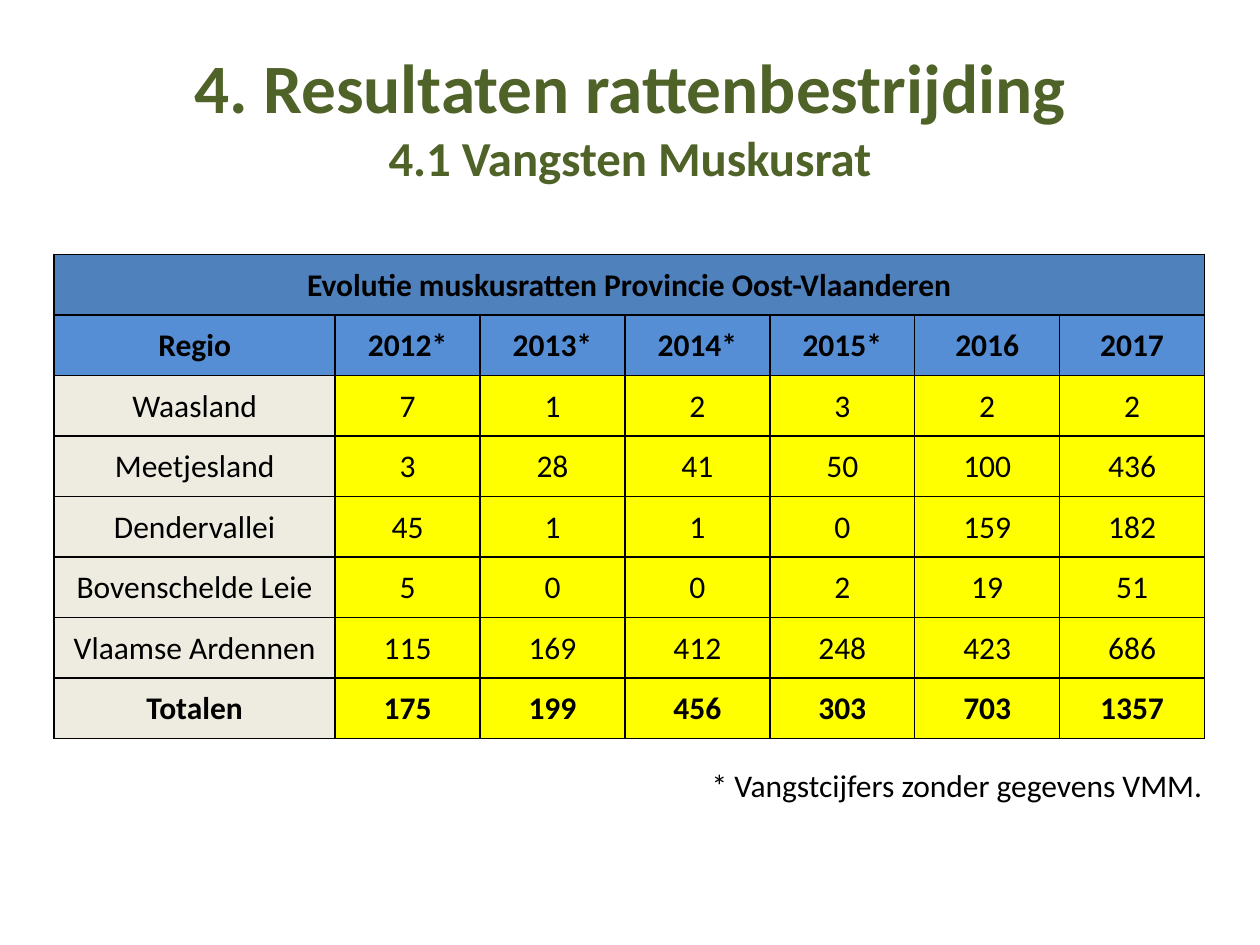
"""Build the slide with yearly muskrat catches per region of Oost-Vlaanderen."""
from lxml import etree
from pptx import Presentation, util as u
from pptx.dml.color import RGBColor
from pptx.enum import text
from pptx.oxml.ns import qn


def colour(target, value):
    target.solid()
    target.fore_color.rgb = RGBColor.from_string(value)


def add_run(paragraph, wording, size, ink, bold):
    run = paragraph.add_run()
    run.text = wording
    run.font.name = "Calibri"
    run.font.size = u.Pt(size)
    run.font.bold = bold
    colour(run.font.fill, ink)


deck = Presentation()
deck.slide_width, deck.slide_height = u.Inches(10), u.Inches(7.5)
slide = deck.slides.add_slide(deck.slide_layouts[5])

heading = slide.shapes.title
heading.left, heading.top = int(deck.slide_width * 0.05), u.Inches(0.29)
heading.width, heading.height = int(deck.slide_width * 0.9), u.Inches(1.25)
heading.text_frame.auto_size = text.MSO_AUTO_SIZE.NONE
heading.text_frame.vertical_anchor = text.MSO_ANCHOR.MIDDLE
heading_line = heading.text_frame.paragraphs[0]
heading_line.alignment = text.PP_ALIGN.CENTER
add_run(heading_line, "4. Resultaten rattenbestrijding", 39.6, "4F6228", True)
heading_line.add_line_break()
add_run(heading_line, "4.1 Vangsten Muskusrat", 27.9, "4F6228", True)

years = ["2012*", "2013*", "2014*", "2015*", "2016", "2017"]
catches = {
    "Waasland": [7, 1, 2, 3, 2, 2],
    "Meetjesland": [3, 28, 41, 50, 100, 436],
    "Dendervallei": [45, 1, 1, 0, 159, 182],
    "Bovenschelde Leie": [5, 0, 0, 2, 19, 51],
    "Vlaamse Ardennen": [115, 169, 412, 248, 423, 686],
}
totals = [sum(year) for year in zip(*catches.values())]
rows = [["Evolutie muskusratten Provincie Oost-Vlaanderen"] + [""] * len(years),
        ["Regio", *years],
        *([region, *counts] for region, counts in catches.items()),
        ["Totalen", *totals]]

region_width, year_width, row_height = 2.23, 1.15, 0.48
evolution = slide.shapes.add_table(
    len(rows), len(rows[0]), u.Inches(0.43), u.Inches(2.02),
    u.Inches(region_width + len(years) * year_width),
    u.Inches(len(rows) * row_height)).table
for c, column in enumerate(evolution.columns):
    column.width = u.Inches(year_width if c else region_width)

for r, row in enumerate(rows):
    evolution.rows[r].height = u.Inches(row_height)
    for c, value in enumerate(row):
        cell = evolution.cell(r, c)
        cell.margin_left = cell.margin_right = cell.margin_top = u.Inches(0.01)
        cell.margin_bottom = 0
        cell.vertical_anchor = text.MSO_ANCHOR.MIDDLE
        for side in ("a:lnL", "a:lnR", "a:lnT", "a:lnB"):
            border = etree.SubElement(cell._tc.get_or_add_tcPr(), qn(side), w=str(u.Pt(1)))
            ink = etree.SubElement(border, qn("a:solidFill"))
            etree.SubElement(ink, qn("a:srgbClr"), val="000000")
        body = "FFFF00" if c else "EEECE1"
        colour(cell.fill, {0: "4F81BD", 1: "558ED5"}.get(r, body))
        if value != "":
            entry = cell.text_frame.paragraphs[0]
            entry.alignment = text.PP_ALIGN.CENTER
            add_run(entry, str(value), 18, "000000", r in (0, 1, len(rows) - 1))
evolution.cell(0, 0).merge(evolution.cell(0, len(years)))

footnote = slide.shapes.add_textbox(
    u.Inches(5.55), u.Inches(6.03), u.Inches(4.2), u.Inches(0.4)).text_frame
footnote.word_wrap = False
footnote.auto_size = text.MSO_AUTO_SIZE.SHAPE_TO_FIT_TEXT
add_run(footnote.paragraphs[0], "* Vangstcijfers zonder gegevens VMM.", 18, "000000", False)

deck.save("out.pptx")
